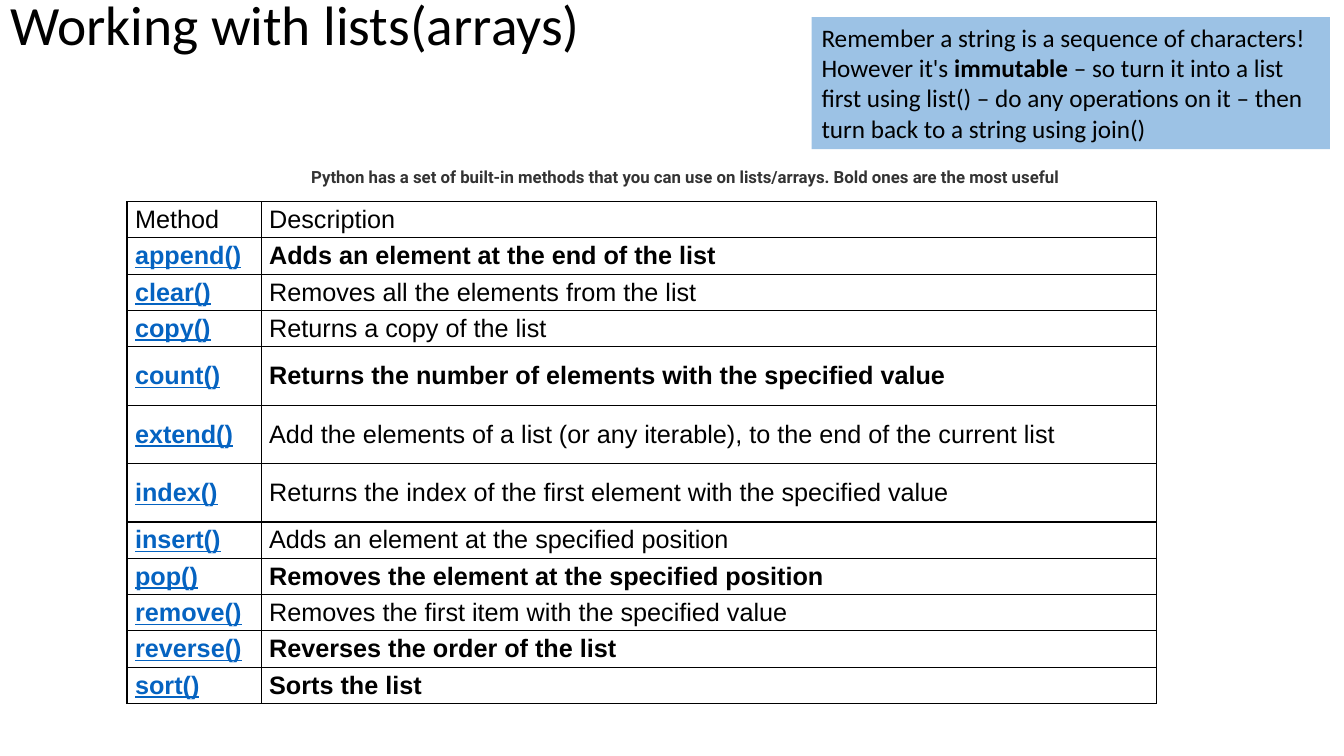
from pptx import Presentation
from pptx.dml.color import RGBColor
from pptx.enum.text import MSO_ANCHOR as ANCHOR, MSO_AUTO_SIZE as AUTO, PP_ALIGN as ALIGN
from pptx.oxml import parse_xml
from pptx.oxml.ns import nsdecls
from pptx.util import Inches, Pt

BLACK, WHITE, LINK, GREY, SKY = "000000", "FFFFFF", "0563C1", "333333", "9CC2E5"

METHODS = [
    ("append()", "Adds an element at the end of the list", True),
    ("clear()", "Removes all the elements from the list", False),
    ("copy()", "Returns a copy of the list", False),
    ("count()", "Returns the number of elements with the specified value", True),
    ("extend()", "Add the elements of a list (or any iterable), to the end of the current list", False),
    ("index()", "Returns the index of the first element with the specified value", False),
    ("insert()", "Adds an element at the specified position", False),
    ("pop()", "Removes the element at the specified position", True),
    ("remove()", "Removes the first item with the specified value", False),
    ("reverse()", "Reverses the order of the list", True),
    ("sort()", "Sorts the list", True),
]
TALL_ROWS = {"count()", "extend()", "index()"}


def rgb(value):
    return RGBColor.from_string(value)


def add_run(p, text, size, font, color=BLACK, bold=False, underline=False):
    r = p.add_run()
    r.text = text
    r.font.size = Pt(size)
    r.font.name = font
    r.font.bold = bold
    r.font.underline = underline
    r.font.color.rgb = rgb(color)


def add_title(s, x, y, w, h):
    sp = s.shapes.title
    sp.left, sp.top, sp.width, sp.height = map(Inches, (x, y, w, h))
    tf = sp.text_frame
    tf.auto_size = AUTO.NONE
    tf.vertical_anchor = ANCHOR.MIDDLE
    p = tf.paragraphs[0]
    p.alignment = ALIGN.LEFT
    p.line_spacing = 0.9
    add_run(p, "Working with lists(arrays)", 39.6, "Calibri")


def add_box(s, x, y, w, h, fill):
    sp = s.shapes.add_textbox(*map(Inches, (x, y, w, h)))
    sp.fill.solid()
    sp.fill.fore_color.rgb = rgb(fill)
    tf = sp.text_frame
    tf.word_wrap = True
    tf.auto_size = AUTO.SHAPE_TO_FIT_TEXT
    return tf


def add_intro(s, x, y, w, h):
    tf = add_box(s, x, y, w, h, WHITE)
    tf.vertical_anchor = ANCHOR.MIDDLE
    p = tf.paragraphs[0]
    p.alignment = ALIGN.CENTER
    text = "Python has a set of built-in methods that you can use on lists/arrays. Bold ones are the most useful"
    add_run(p, text, 12, "Roboto", GREY, True)


def add_reminder(s, x, y, w, h):
    tf = add_box(s, x, y, w, h, SKY)
    add_run(tf.paragraphs[0], "Remember a string is a sequence of characters!", 18, "Calibri")
    p = tf.add_paragraph()
    add_run(p, "However it's ", 18, "Calibri")
    add_run(p, "immutable ", 18, "Calibri", bold=True)
    add_run(p, "– so turn it into a list first using list() – do any operations on it "
               "– then turn back to a string using join()", 18, "Calibri")


def fill_cell(cell, text, **style):
    cell.margin_left = cell.margin_right = Inches(0.08)
    cell.margin_top = cell.margin_bottom = Inches(0.04)
    cell.vertical_anchor = ANCHOR.MIDDLE
    props = cell._tc.get_or_add_tcPr()
    for side in ("lnL", "lnR", "lnT", "lnB"):
        props.append(parse_xml(
            f'<a:{side} {nsdecls("a")} w="{Pt(1)}"><a:solidFill>'
            f'<a:srgbClr val="{BLACK}"/></a:solidFill></a:{side}>'))
    cell.fill.solid()
    cell.fill.fore_color.rgb = rgb(WHITE)
    add_run(cell.text_frame.paragraphs[0], text, 18, "Arial", **style)


def add_methods(s, x, y, w, name_w, row_h, tall_h):
    heights = [row_h] + [tall_h if name in TALL_ROWS else row_h for name, _, _ in METHODS]
    box = map(Inches, (x, y, w, sum(heights)))
    table = s.shapes.add_table(len(heights), 2, *box).table
    table.columns[0].width = Inches(name_w)
    table.columns[1].width = Inches(w - name_w)
    for row, height in zip(table.rows, heights):
        row.height = Inches(height)
    fill_cell(table.cell(0, 0), "Method")
    fill_cell(table.cell(0, 1), "Description")
    for i, (name, description, useful) in enumerate(METHODS, 1):
        fill_cell(table.cell(i, 0), name, color=LINK, bold=True, underline=True)
        fill_cell(table.cell(i, 1), description, bold=useful)


def main():
    prs = Presentation()
    prs.slide_width, prs.slide_height = Inches(13.33), Inches(7.5)
    s = prs.slides.add_slide(prs.slide_layouts[5])
    add_title(s, 0, -0.01, 11.5, 0.57)
    add_methods(s, 1.26, 2, 10.21, 1.33, 0.36, 0.58)
    add_intro(s, 2.98, 1.6, 7.64, 0.3)
    add_reminder(s, 8.05, 0.17, 5.14, 1.31)
    prs.save("out.pptx")


if __name__ == "__main__":
    main()
